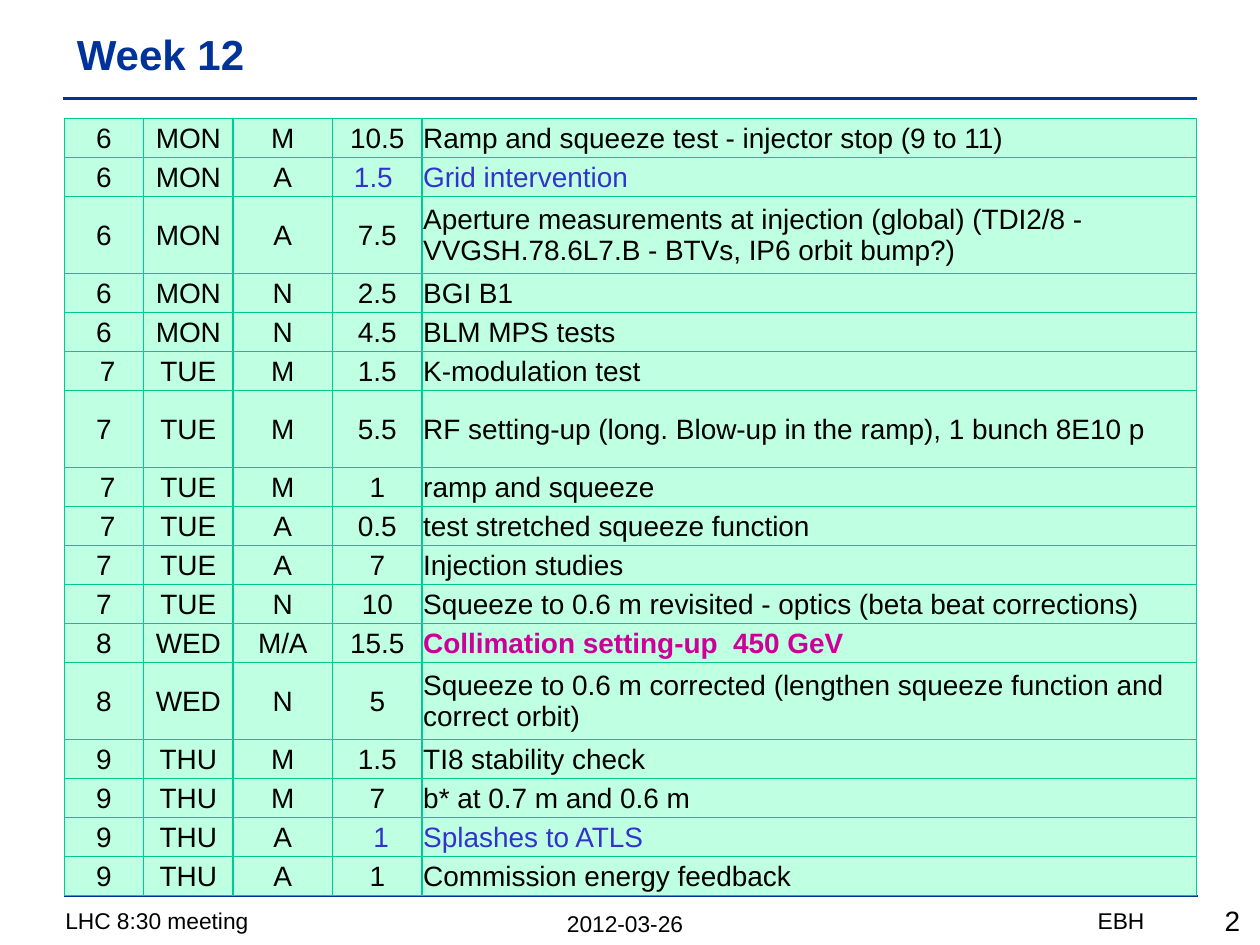
from lxml.etree import SubElement
from pptx import Presentation
from pptx.dml.color import RGBColor
from pptx.enum.shapes import MSO_CONNECTOR
from pptx.enum.text import MSO_ANCHOR, PP_ALIGN
from pptx.oxml.ns import qn
from pptx.util import Inches, Pt

# Content
TITLE = "Week 12"
SCHEDULE = [  # date, day, shift, hours, activity
    ("6", "MON", "M", "10.5", "Ramp and squeeze test - injector stop (9 to 11)"),
    ("6", "MON", "A", "1.5 ", "Grid intervention"),
    ("6", "MON", "A", "7.5", "Aperture measurements at injection (global) "
     "(TDI2/8 - VVGSH.78.6L7.B - BTVs, IP6 orbit bump?)"),
    ("6", "MON", "N", "2.5", "BGI B1"),
    ("6", "MON", "N", "4.5", "BLM MPS tests"),
    (" 7", "TUE", "M", "1.5", "K-modulation test"),
    ("7", "TUE", "M", "5.5", "RF setting-up (long. Blow-up in the ramp), 1 bunch 8E10 p"),
    (" 7", "TUE", "M", "1", "ramp and squeeze"),
    (" 7", "TUE", "A", "0.5", "test stretched squeeze function"),
    ("7", "TUE", "A", "7", "Injection studies"),
    ("7", "TUE", "N", "10", "Squeeze to 0.6 m revisited - optics (beta beat corrections)"),
    ("8", "WED", "M/A", "15.5", "Collimation setting-up  450 GeV"),
    ("8", "WED", "N", "5", "Squeeze to 0.6 m corrected (lengthen squeeze function and "
     "correct orbit)"),
    ("9", "THU", "M", "1.5", "TI8 stability check"),
    ("9", "THU", "M", "7", "b* at 0.7 m and 0.6 m"),
    ("9", "THU", "A", " 1", "Splashes to ATLS"),
    ("9", "THU", "A", "1", "Commission energy feedback"),
]
TALL_ROWS = {2, 6, 12}
SERVICE_ROWS = {1, 15}   # hours and activity in blue
KEY_ROW = 11             # activity in bold magenta
COLUMN_WIDTHS = [0.63, 0.71, 0.79, 0.71, 6.15]
HOURS, ACTIVITY = 3, 4
FOOTERS = [  # text, left, top, width, height, size, alignment
    ("2012-03-26", 2.42, 7.17, 5.08, 0.32, 13, PP_ALIGN.CENTER),
    ("LHC 8:30 meeting", 0.42, 7.15, 3.7, 0.32, 13, PP_ALIGN.LEFT),
    ("EBH", 6.26, 7.15, 2.92, 0.32, 13, PP_ALIGN.RIGHT),
    ("2", 8.79, 7.12, 1.15, 0.37, 16, PP_ALIGN.RIGHT),
]
RULES = [(0.51, 7.11), (0.5, 0.78)]  # left, top
RULE_WIDTH = 9

NAVY, BLACK, BLUE, MAGENTA = "003399", "000000", "3333CC", "CC0099"
MINT, GREEN = "BFFFE2", "00C896"


def color(value):
    return RGBColor.from_string(value)


def write(frame, text, size=16, fill=BLACK, bold=False, align=PP_ALIGN.LEFT):
    frame.word_wrap = True
    para = frame.paragraphs[0]
    para.alignment = align
    span = para.add_run()
    span.text = text
    span.font.name = "Arial"
    span.font.size = Pt(size)
    span.font.bold = bold
    span.font.color.rgb = color(fill)


def add_rule(slide, left, top):
    rule = slide.shapes.add_connector(MSO_CONNECTOR.STRAIGHT, Inches(left), Inches(top),
                                      Inches(left + RULE_WIDTH), Inches(top))
    rule.line.color.rgb = color(NAVY)
    rule.line.width = Pt(1.5)
    SubElement(rule.element.spPr, qn("a:effectLst"))


def format_cell(cell):
    cell.vertical_anchor = MSO_ANCHOR.MIDDLE
    cell.margin_left = cell.margin_top = cell.margin_right = Inches(0.01)
    cell.margin_bottom = 0
    properties = cell._tc.get_or_add_tcPr()
    for side in ("lnL", "lnR", "lnT", "lnB"):
        border = SubElement(properties, qn(f"a:{side}"), w=str(Pt(0.75)))
        solid = SubElement(border, qn("a:solidFill"))
        SubElement(solid, qn("a:srgbClr"), val=GREEN)
    cell.fill.solid()
    cell.fill.fore_color.rgb = color(MINT)


def text_style(row, column):
    if row in SERVICE_ROWS and column >= HOURS:
        return {"fill": BLUE}
    if row == KEY_ROW and column == ACTIVITY:
        return {"fill": MAGENTA, "bold": True}
    return {}


def add_schedule(slide):
    heights = [0.61 if row in TALL_ROWS else 0.31 for row in range(len(SCHEDULE))]
    table = slide.shapes.add_table(
        len(SCHEDULE), len(COLUMN_WIDTHS), Inches(0.51), Inches(0.94),
        Inches(sum(COLUMN_WIDTHS)), Inches(sum(heights))).table
    table.first_row = table.horz_banding = False
    for column, width in zip(table.columns, COLUMN_WIDTHS):
        column.width = Inches(width)
    for row, (entry, height) in enumerate(zip(SCHEDULE, heights)):
        table.rows[row].height = Inches(height)
        for column, text in enumerate(entry):
            cell = table.cell(row, column)
            format_cell(cell)
            align = PP_ALIGN.LEFT if column == ACTIVITY else PP_ALIGN.CENTER
            write(cell.text_frame, text, align=align, **text_style(row, column))


def main():
    deck = Presentation()
    deck.slide_width, deck.slide_height = Inches(10), Inches(7.5)
    slide = deck.slides.add_slide(deck.slide_layouts[5])

    # Footer and rules
    for text, left, top, width, height, size, align in FOOTERS:
        box = slide.shapes.add_textbox(Inches(left), Inches(top), Inches(width), Inches(height))
        write(box.text_frame, text, size=size, align=align)
    for left, top in RULES:
        add_rule(slide, left, top)

    # Schedule
    add_schedule(slide)

    # Title
    title = slide.shapes.title
    title.left, title.top = Inches(0.51), Inches(0.09)
    title.width, title.height = Inches(8.99), Inches(0.68)
    title.text_frame.vertical_anchor = MSO_ANCHOR.MIDDLE
    write(title.text_frame, TITLE, size=24, fill=NAVY, bold=True)

    deck.save("out.pptx")


if __name__ == "__main__":
    main()
